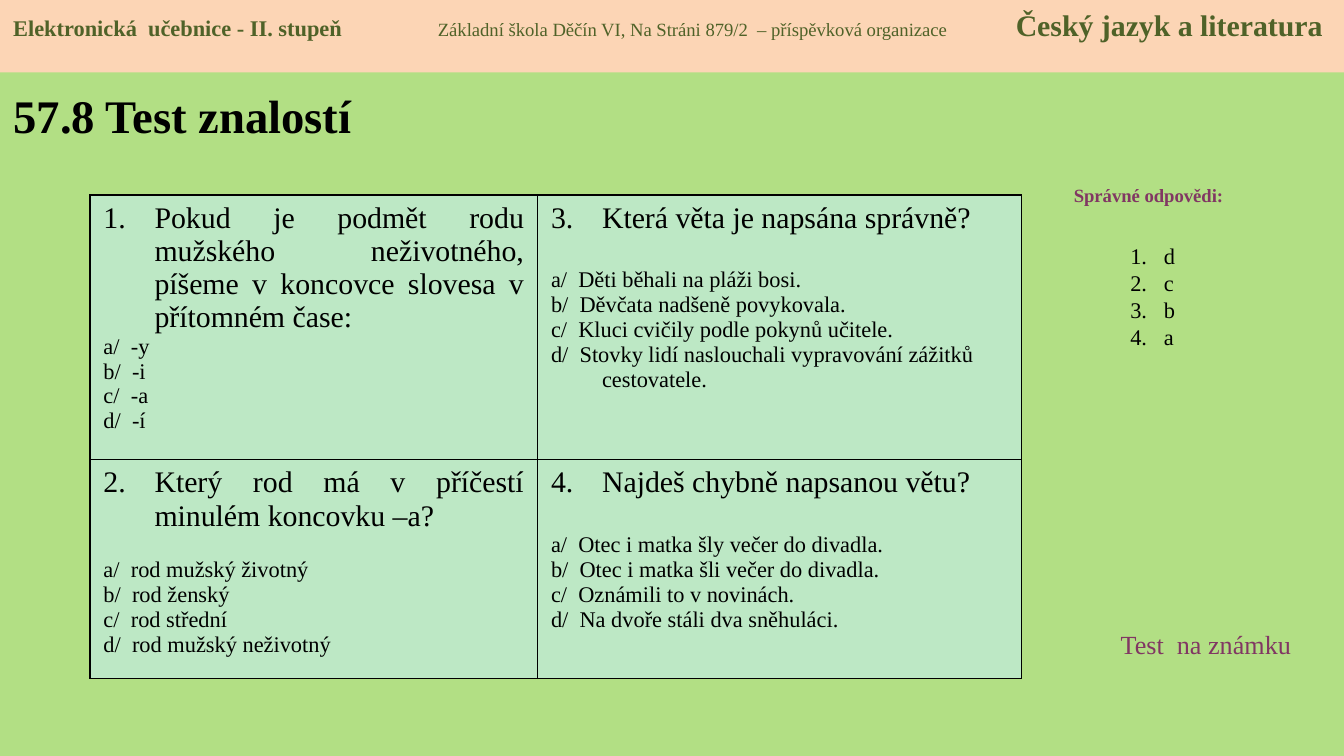
from lxml.etree import SubElement
from pptx import Presentation
from pptx.dml.color import RGBColor
from pptx.enum.shapes import MSO_SHAPE as Shape
from pptx.enum.text import MSO_ANCHOR as Anchor, MSO_AUTO_SIZE as Fit, PP_ALIGN as Align
from pptx.oxml.ns import qn
from pptx.util import Inches, Pt

FONT = "Times New Roman"
BLACK, GREEN, PLUM = "000000", "4F6228", "813763"
LETTERS = "abcd"

# Per cell: question, answers, alignment, gap before the answers in points
QUIZ = [
    ("Pokud je podmět rodu mužského neživotného, píšeme v koncovce slovesa v přítomném čase:",
     ["-y", "-i", "-a", "-í"], Align.JUSTIFY, 0),
    ("Který rod má v příčestí minulém koncovku –a?",
     ["rod mužský životný", "rod ženský", "rod střední", "rod mužský neživotný"],
     Align.JUSTIFY, 13.3),
    ("Která věta je napsána správně?",
     ["Děti běhali na pláži bosi.", "Děvčata nadšeně povykovala.",
      "Kluci cvičily podle pokynů učitele.",
      "Stovky lidí naslouchali vypravování zážitků cestovatele."], Align.LEFT, 17.7),
    ("Najdeš chybně napsanou větu?",
     ["Otec i matka šly večer do divadla.", "Otec i matka šli večer do divadla.",
      "Oznámili to v novinách.", "Na dvoře stáli dva sněhuláci."], Align.LEFT, 17.7),
]


def paint(fill, color):
    fill.solid()
    fill.fore_color.rgb = RGBColor.from_string(color)


def style(run, size, color=BLACK, bold=False):
    font = run.font
    font.name, font.size, font.bold = FONT, Pt(size), bold
    font.color.rgb = RGBColor.from_string(color)


def write(para, text, size, color=BLACK, bold=False, align=Align.LEFT):
    para.text = text
    para.alignment = align
    para.space_before = Pt(0)
    for run in para.runs:
        style(run, size, color, bold)


def hang(para, inches, start=None):
    """Hanging indent, numbered when start is given."""
    props = para._p.get_or_add_pPr()
    props.set("marL", str(Inches(inches)))
    props.set("indent", str(-Inches(inches)))
    if start:
        SubElement(props, qn("a:buFont"), typeface=FONT)
        SubElement(props, qn("a:buAutoNum"), type="arabicPeriod", startAt=str(start))


def place(shape, box):
    shape.left, shape.top, shape.width, shape.height = map(Inches, box)


def label(slide, box, text, size, bold=False, align=Align.LEFT):
    frame = slide.shapes.add_textbox(*map(Inches, box)).text_frame
    frame.word_wrap = True
    write(frame.paragraphs[0], text, size, PLUM, bold, align)


def header(slide, box):
    bar = slide.shapes.add_shape(Shape.RECTANGLE, *map(Inches, box))
    bar.shadow.inherit = False
    paint(bar.fill, "FCD5B5")
    bar.line.fill.background()
    frame = bar.text_frame
    frame.vertical_anchor = Anchor.TOP
    para = frame.paragraphs[0]
    para.alignment = Align.LEFT
    parts = [
        ("Elektronická  učebnice - II. stupeň", 12, True),
        ("\tZákladní škola Děčín VI, Na Stráni 879/2  – příspěvková organizace", 10, False),
        ("\tČeský jazyk a literatura", 16, True),
    ]
    for text, size, bold in parts:
        run = para.add_run()
        run.text = text
        style(run, size, GREEN, bold)
    tabs = SubElement(para._p.get_or_add_pPr(), qn("a:tabLst"))
    for pos in (3.16, 7.46):
        SubElement(tabs, qn("a:tab"), pos=str(Inches(pos)), algn="l")


def title(slide, box):
    shape = slide.shapes.title
    place(shape, box)
    frame = shape.text_frame
    frame.auto_size = Fit.NONE
    frame.vertical_anchor = Anchor.MIDDLE
    write(frame.paragraphs[0], "57.8 Test znalostí", 25, bold=True)


def border(cell):
    props = cell._tc.get_or_add_tcPr()
    for side in "LRTB":
        line = SubElement(props, qn(f"a:ln{side}"), w=str(Pt(1)))
        SubElement(SubElement(line, qn("a:solidFill")), qn("a:srgbClr"), val=BLACK)


def question(cell, number, item):
    text, answers, align, gap = item
    border(cell)
    paint(cell.fill, "BDE8C5")
    frame = cell.text_frame
    head = frame.paragraphs[0]
    write(head, text, 16, align=align)
    hang(head, 0.38, number)
    for i, (letter, answer) in enumerate(zip(LETTERS, answers)):
        para = frame.add_paragraph()
        write(para, f"{letter}/  {answer}", 12)
        hang(para, 0.38)
        if i == 0:
            para.space_before = Pt(gap)


def quiz(slide, box):
    table = slide.shapes.add_table(2, 2, *map(Inches, box)).table
    table.first_row = table.horz_banding = False
    for col, width in zip(table.columns, (3.33, 3.6)):
        col.width = Inches(width)
    for row, height in zip(table.rows, (1.97, 1.63)):
        row.height = Inches(height)
    for i, item in enumerate(QUIZ):
        question(table.cell(i % 2, i // 2), i + 1, item)


def key(slide, box):
    """List of the right answers."""
    left, top, width, height = box
    label(slide, (left, top, width, 0.27), "Správné odpovědi:", 10, True, Align.CENTER)
    body = slide.placeholders[1]
    place(body, (left + 0.55, top + 0.43, 0.55, height - 0.43))
    frame = body.text_frame
    frame.auto_size = Fit.NONE
    frame.vertical_anchor = Anchor.TOP
    frame.text = "\n".join("dcba")
    for para in frame.paragraphs:
        write(para, para.text, 12)
        para.line_spacing = Pt(14.5)
        hang(para, 0.25, 1)


def main():
    prs = Presentation()
    prs.slide_width, prs.slide_height = Inches(10), Inches(10) * 9 // 16
    slide = prs.slides.add_slide(prs.slide_layouts[0])
    paint(slide.background.fill, "B2DF84")
    title(slide, (0, 0.53, 3.19, 0.65))
    quiz(slide, (0.67, 1.45, 6.93, 3.6))
    key(slide, (7.76, 1.32, 1.57, 1.54))
    label(slide, (8.24, 4.63, 1.57, 0.34), "Test  na známku", 14)
    header(slide, (0, 0, 10, 0.54))
    prs.save("out.pptx")


if __name__ == "__main__":
    main()
